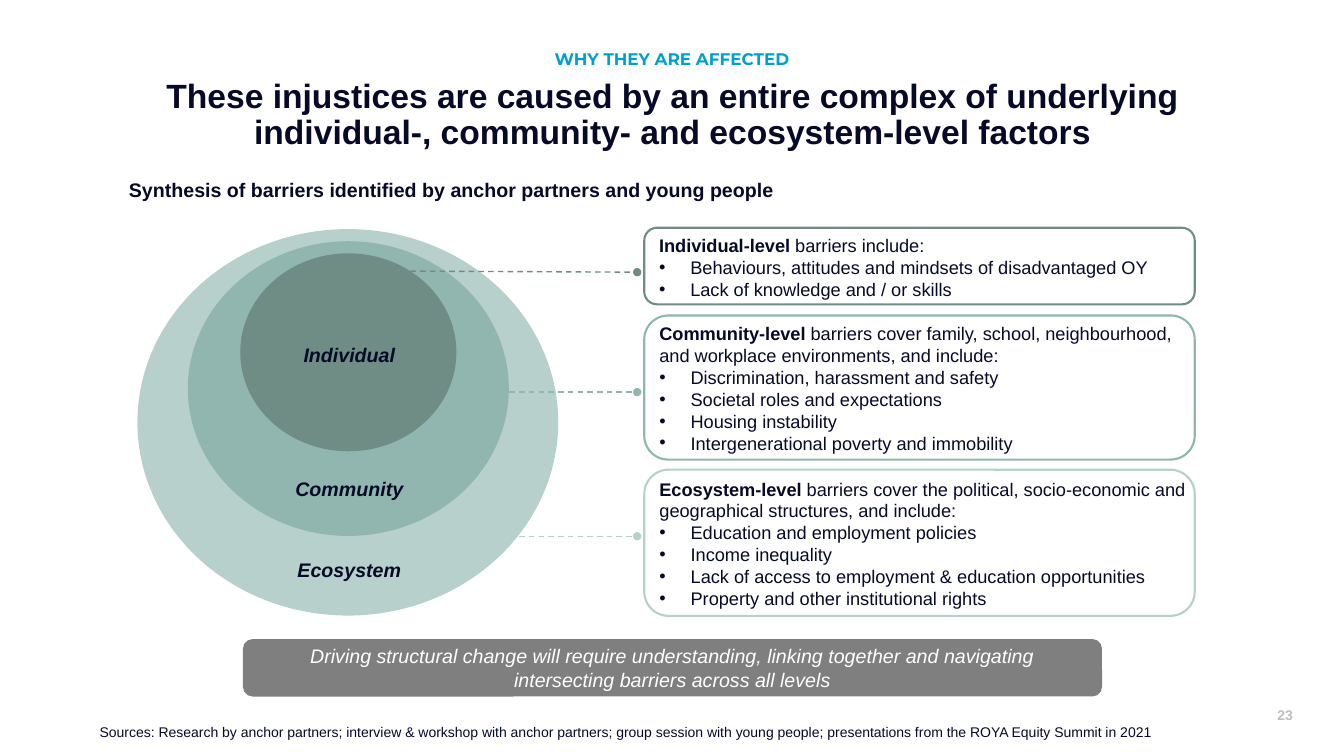
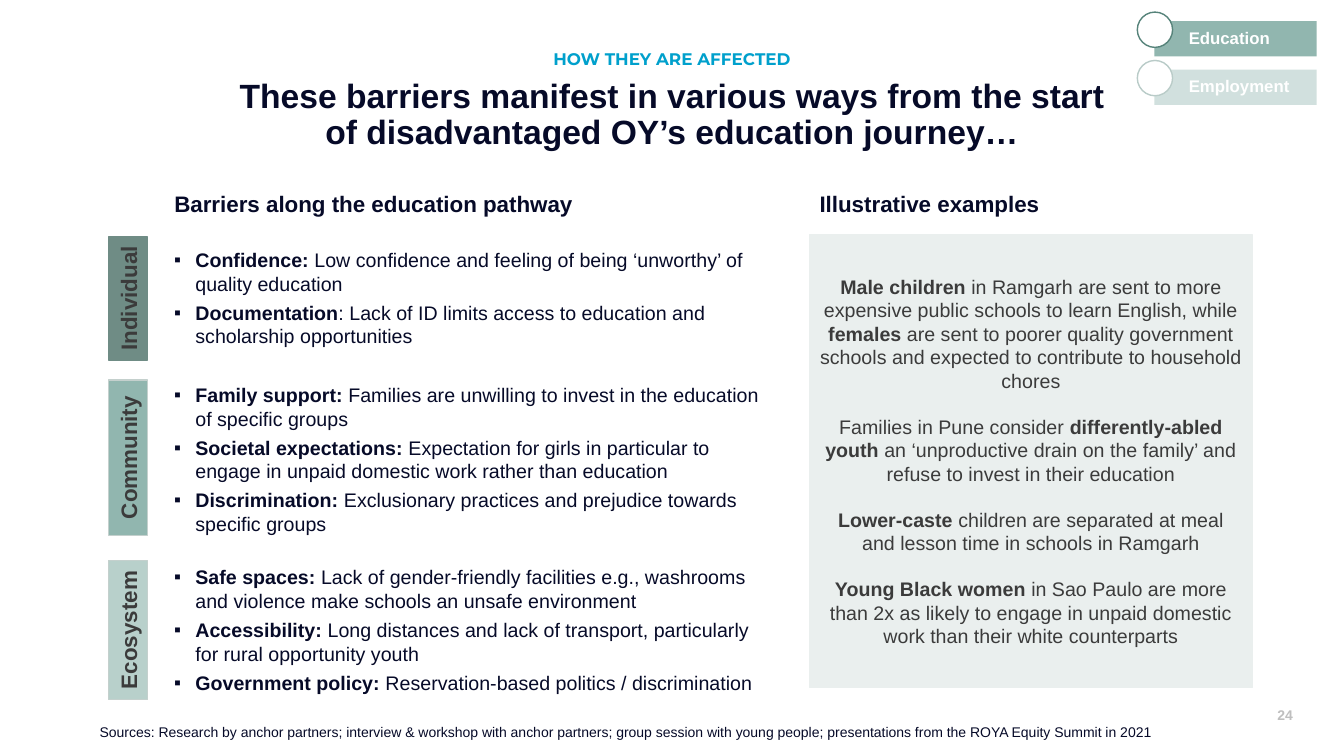
from dataclasses import dataclass
from typing import NamedTuple, Optional, Sequence

from lxml import etree
from pptx import Presentation, util as u
from pptx.dml.color import RGBColor
from pptx.enum import dml, shapes, text
from pptx.oxml.ns import qn


# Shared look
@dataclass(frozen=True)
class Theme:
    font: str = "Arial"
    eyebrow_font: str = "Montserrat"
    ink: str = "060A28"
    grey_ink: str = "3B3B3B"
    white: str = "FFFFFF"
    accent: str = "00A0CC"
    page_number: str = "BFBFBF"
    individual: str = "6F8C85"
    community: str = "91B6AF"
    ecosystem: str = "B8D0CB"
    banner: str = "7F7F7F"
    panel: str = "EAEFEE"
    tab_edge: str = "C4D0CD"
    marker_edge: str = "56837A"
    title_size: float = 24
    heading_size: float = 16
    body_size: float = 14
    callout_size: float = 13
    label_size: float = 12
    small_size: float = 10


THEME = Theme()
SOURCES = ("Sources: Research by anchor partners; interview & workshop with anchor partners; "
           "group session with young people; presentations from the ROYA Equity Summit in 2021")


class Box(NamedTuple):
    left: float
    top: float
    width: float
    height: float

    def lengths(self) -> list:
        return [u.Inches(value) for value in self]


class Run(NamedTuple):
    wording: str
    bold: bool = False


@dataclass(frozen=True)
class Style:
    size: float = THEME.body_size
    color: str = THEME.ink
    font: str = THEME.font
    italic: bool = False
    align: text.PP_ALIGN = text.PP_ALIGN.LEFT
    line_spacing: Optional[float] = None
    space_before: float = 0


class Bullet(NamedTuple):
    symbol: str
    indent: float


@dataclass(frozen=True)
class Level:
    name: str
    color: str
    ring: Box
    label_top: float
    callout: Box
    callout_text_top: float
    leader: tuple
    intro: str
    points: tuple


@dataclass(frozen=True)
class BarrierGroup:
    name: str
    color: str
    edge: str
    tab_top: float
    tab_height: float
    text_box: Box
    points: tuple


CENTER = text.PP_ALIGN.CENTER
RECTANGLE = shapes.MSO_SHAPE.RECTANGLE
ROUNDED = shapes.MSO_SHAPE.ROUNDED_RECTANGLE
OVAL = shapes.MSO_SHAPE.OVAL
HEADING = Style(THEME.heading_size, line_spacing=0.9)

LEVELS = (
    Level("Individual", THEME.individual, Box(2.39, 2.52, 2.13, 1.95), 3.35,
          Box(6.39, 2.26, 5.46, 0.76), 2.33, (4.07, 2.69, 6.32, 2.7),
          "barriers include:",
          ("Behaviours, attitudes and mindsets of disadvantaged OY",
           "Lack of knowledge and / or skills")),
    Level("Community", THEME.community, Box(1.87, 2.4, 3.17, 2.91), 4.68,
          Box(6.39, 3.13, 5.46, 1.43), 3.2, (4.86, 3.89, 6.32, 3.89),
          "barriers cover family, school, neighbourhood, and workplace environments, and include:",
          ("Discrimination, harassment and safety", "Societal roles and expectations",
           "Housing instability", "Intergenerational poverty and immobility")),
    Level("Ecosystem", THEME.ecosystem, Box(1.37, 2.28, 4.16, 3.82), 5.49,
          Box(6.39, 4.66, 5.46, 1.45), 4.74, (4.86, 5.32, 6.32, 5.32),
          "barriers cover the political, socio-economic and geographical structures, and include:",
          ("Education and employment policies", "Income inequality",
           "Lack of access to employment & education opportunities",
           "Property and other institutional rights")),
)

BARRIER_GROUPS = (
    BarrierGroup("Individual", THEME.individual, THEME.individual, 2.35, 1.22,
                 Box(1.63, 2.41, 6.03, 1.12), (
        ("Confidence: ", "Low confidence and feeling of being ‘unworthy’ of quality education"),
        ("Documentation", ": Lack of ID limits access to education and scholarship opportunities"))),
    BarrierGroup("Community", THEME.community, THEME.tab_edge, 3.77, 1.54,
                 Box(1.63, 3.75, 6.03, 1.62), (
        ("Family support: ", "Families are unwilling to invest in the education of specific groups"),
        ("Societal expectations: ", "Expectation for girls in particular to engage in unpaid "
                                    "domestic work rather than education"),
        ("Discrimination: ", "Exclusionary practices and prejudice towards specific groups"))),
    BarrierGroup("Ecosystem", THEME.ecosystem, THEME.tab_edge, 5.56, 1.38,
                 Box(1.63, 5.56, 6.03, 1.62), (
        ("Safe spaces: ", "Lack of gender-friendly facilities e.g., washrooms and violence "
                          "make schools an unsafe environment"),
        ("Accessibility: ", "Long distances and lack of transport, particularly for rural "
                            "opportunity youth"),
        ("Government policy: ", "Reservation-based politics / discrimination"))),
)

EXAMPLES = (
    (Run("Male children ", True),
     Run("in Ramgarh are sent to more expensive public schools to learn English, while "),
     Run("females", True),
     Run(" are sent to poorer quality government schools and expected to contribute to "
         "household chores")),
    (Run("Families in Pune consider "), Run("differently-abled youth ", True),
     Run("an ‘unproductive drain on the family’ and refuse to invest in their education")),
    (Run("Lower-caste ", True),
     Run("children are separated at meal and lesson time in schools in Ramgarh")),
    (Run("Young Black women ", True),
     Run("in Sao Paulo are more than 2x as likely to engage in unpaid domestic work than "
         "their white counterparts")),
)


# Text helpers
def set_bullet(paragraph, bullet: Bullet) -> None:
    properties = paragraph._p.get_or_add_pPr()
    properties.set("marL", str(u.Inches(bullet.indent)))
    properties.set("indent", str(-u.Inches(bullet.indent)))
    bullet_color = etree.SubElement(properties, qn("a:buClr"))
    etree.SubElement(bullet_color, qn("a:srgbClr"), val=THEME.ink)
    etree.SubElement(properties, qn("a:buFont"), typeface=THEME.font)
    etree.SubElement(properties, qn("a:buChar"), char=bullet.symbol)


def add_paragraph(frame, runs: Sequence[Run], style: Style,
                  bullet: Optional[Bullet] = None) -> None:
    first = not frame.paragraphs[0].runs
    paragraph = frame.paragraphs[0] if first else frame.add_paragraph()
    paragraph.alignment = style.align
    paragraph.space_before = u.Pt(0 if first else style.space_before)
    if style.line_spacing:
        paragraph.line_spacing = style.line_spacing
    if bullet:
        set_bullet(paragraph, bullet)
    for item in runs:
        run = paragraph.add_run()
        run.text = item.wording
        run.font.name = style.font
        run.font.size = u.Pt(style.size)
        run.font.bold = item.bold
        run.font.italic = style.italic
        run.font.color.rgb = RGBColor.from_string(style.color)


def set_margins(frame, left: float, top: float, right: float, bottom: float) -> None:
    frame.margin_left, frame.margin_top = u.Inches(left), u.Inches(top)
    frame.margin_right, frame.margin_bottom = u.Inches(right), u.Inches(bottom)


def add_text(slide, box: Box, runs: Sequence[Run] = (), style: Style = Style()):
    frame = slide.shapes.add_textbox(*box.lengths()).text_frame
    frame.word_wrap = True
    if runs:
        add_paragraph(frame, runs, style)
    return frame


# Shape helpers
def add_shape(slide, kind, box: Box, fill: Optional[str] = None,
              line: Optional[str] = None, line_width: float = 1):
    shape = slide.shapes.add_shape(kind, *box.lengths())
    shape.shadow.inherit = False
    if fill:
        shape.fill.solid()
        shape.fill.fore_color.rgb = RGBColor.from_string(fill)
    else:
        shape.fill.background()
    if line:
        shape.line.color.rgb = RGBColor.from_string(line)
        shape.line.width = u.Pt(line_width)
    else:
        shape.line.fill.background()
    return shape


def add_leader(slide, ends: tuple, color: str) -> None:
    connector = slide.shapes.add_connector(
        shapes.MSO_CONNECTOR.STRAIGHT, *[u.Inches(value) for value in ends])
    connector.line.color.rgb = RGBColor.from_string(color)
    connector.line.width = u.Pt(1)
    connector.line.dash_style = dml.MSO_LINE.DASH
    properties = connector.element.spPr
    etree.SubElement(properties.find(qn("a:ln")), qn("a:tailEnd"), type="oval")
    etree.SubElement(properties, qn("a:effectLst"))


def add_base_slide(presentation, title: str, title_box: Box, eyebrow: str, number: int):
    """Start a slide with its title, eyebrow, sources and page number."""
    slide = presentation.slides.add_slide(presentation.slide_layouts[5])
    placeholder = slide.shapes.title
    placeholder.left, placeholder.top, placeholder.width, placeholder.height = title_box.lengths()
    frame = placeholder.text_frame
    frame.word_wrap = True
    frame.auto_size = text.MSO_AUTO_SIZE.NONE
    frame.vertical_anchor = text.MSO_ANCHOR.TOP
    add_paragraph(frame, [Run(title, True)],
                  Style(THEME.title_size, align=CENTER, line_spacing=0.9))
    add_text(slide, Box(4.64, 0.46, 4.05, 0.23), [Run(eyebrow, True)],
             Style(THEME.label_size, THEME.accent, THEME.eyebrow_font,
                   align=CENTER, line_spacing=0.9))
    add_text(slide, Box(0.89, 7.13, 11.56, 0.37), [Run(SOURCES)], Style(THEME.small_size))
    add_text(slide, Box(12.57, 6.96, 0.53, 0.27), [Run(str(number), True)],
             Style(THEME.small_size, THEME.page_number))
    return slide


# Slide parts
def add_callout(slide, level: Level) -> None:
    box = level.callout
    shape = add_shape(slide, ROUNDED, box, line=level.color, line_width=1.5)
    frame = shape.text_frame
    frame.word_wrap = True
    frame.vertical_anchor = text.MSO_ANCHOR.TOP
    # The rounded corners already push the text inwards
    corner = 0.29 * 0.167 * box.height
    set_margins(frame, round(0.15 - corner, 2),
                max(0, round(level.callout_text_top - box.top - corner, 2)), 0, 0)
    style = Style(THEME.callout_size)
    add_paragraph(frame, [Run(f"{level.name}-level ", True), Run(level.intro)], style)
    for point in level.points:
        add_paragraph(frame, [Run(point)], style, Bullet("•", 0.31))


def add_barrier_group(slide, group: BarrierGroup) -> None:
    thickness, center_x = 0.39, 1.27
    center_y = group.tab_top + group.tab_height / 2
    tab = add_shape(slide, RECTANGLE,
                    Box(center_x - group.tab_height / 2, center_y - thickness / 2,
                        group.tab_height, thickness), group.color, group.edge)
    tab.rotation = 270
    set_margins(tab.text_frame, 0, 0.05, 0, 0.05)
    add_paragraph(tab.text_frame, [Run(group.name, True)],
                  Style(THEME.heading_size, THEME.grey_ink, align=CENTER))
    frame = add_text(slide, group.text_box)
    for lead, detail in group.points:
        add_paragraph(frame, [Run(lead, True), Run(detail)], Style(space_before=4),
                      Bullet("▪", 0.21))


def add_pathway_tab(slide, name: str, top: float) -> None:
    tab = add_shape(slide, RECTANGLE, Box(11.45, top, 1.61, 0.35), THEME.community)
    set_margins(tab.text_frame, 0.34, 0, 0, 0.02)
    add_paragraph(tab.text_frame, [Run(name, True)], Style(THEME.label_size, THEME.white))
    add_shape(slide, OVAL, Box(11.28, top - 0.09, 0.35, 0.35), THEME.white, THEME.marker_edge)


def build_causes_slide(presentation) -> None:
    slide = add_base_slide(
        presentation, "These injustices are caused by an entire complex of underlying "
        "individual-, community- and ecosystem-level factors",
        Box(1.5, 0.74, 10.34, 1.45), "WHY THEY ARE AFFECTED", 23)
    add_text(slide, Box(1.18, 1.74, 10.46, 0.28),
             [Run("Synthesis of barriers identified by anchor partners and young people", True)],
             Style(line_spacing=0.9))
    # Nested rings, largest at the back
    for level in reversed(LEVELS):
        add_shape(slide, OVAL, level.ring, level.color, level.color)
    for level in LEVELS:
        add_text(slide, Box(2.52, level.label_top, 1.89, 0.34), [Run(level.name, True)],
                 Style(italic=True, align=CENTER))
        add_callout(slide, level)
        add_leader(slide, level.leader, level.color)
    # Closing message
    banner = add_shape(slide, ROUNDED, Box(2.41, 6.34, 8.52, 0.57), THEME.banner)
    set_margins(banner.text_frame, 0.2, 0.02, 0.2, 0.02)
    add_paragraph(banner.text_frame, [Run(
        "Driving structural change will require understanding, linking together and "
        "navigating intersecting barriers across all levels")],
        Style(color=THEME.white, italic=True, align=CENTER))


def build_education_slide(presentation) -> None:
    slide = add_base_slide(
        presentation, "These barriers manifest in various ways from the start of "
        "disadvantaged OY’s education journey…",
        Box(2.15, 0.74, 9.03, 1.45), "HOW THEY ARE AFFECTED", 24)
    # Pathway tabs, the inactive one under a white veil
    add_pathway_tab(slide, "Education", 0.21)
    add_pathway_tab(slide, "Employment", 0.69)
    veil = add_shape(slide, RECTANGLE, Box(11.19, 0.59, 1.92, 0.48), THEME.white)
    veil_color = veil.element.spPr.find(qn("a:solidFill")).find(qn("a:srgbClr"))
    etree.SubElement(veil_color, qn("a:alpha"), val="59000")
    # Barriers by level
    add_text(slide, Box(1.63, 1.87, 6.25, 0.35),
             [Run("Barriers along the education pathway", True)], HEADING)
    for group in BARRIER_GROUPS:
        add_barrier_group(slide, group)
    # Examples
    add_text(slide, Box(8.03, 1.87, 4.75, 0.32), [Run("Illustrative examples", True)], HEADING)
    panel = add_shape(slide, RECTANGLE, Box(8.03, 2.33, 4.39, 4.49), THEME.panel, THEME.panel)
    for runs in EXAMPLES:
        add_paragraph(panel.text_frame, runs,
                      Style(color=THEME.grey_ink, align=CENTER, space_before=16))


def main() -> None:
    presentation = Presentation()
    presentation.slide_width, presentation.slide_height = u.Inches(13.33), u.Inches(7.5)
    build_causes_slide(presentation)
    build_education_slide(presentation)
    presentation.save("out.pptx")


if __name__ == "__main__":
    main()
